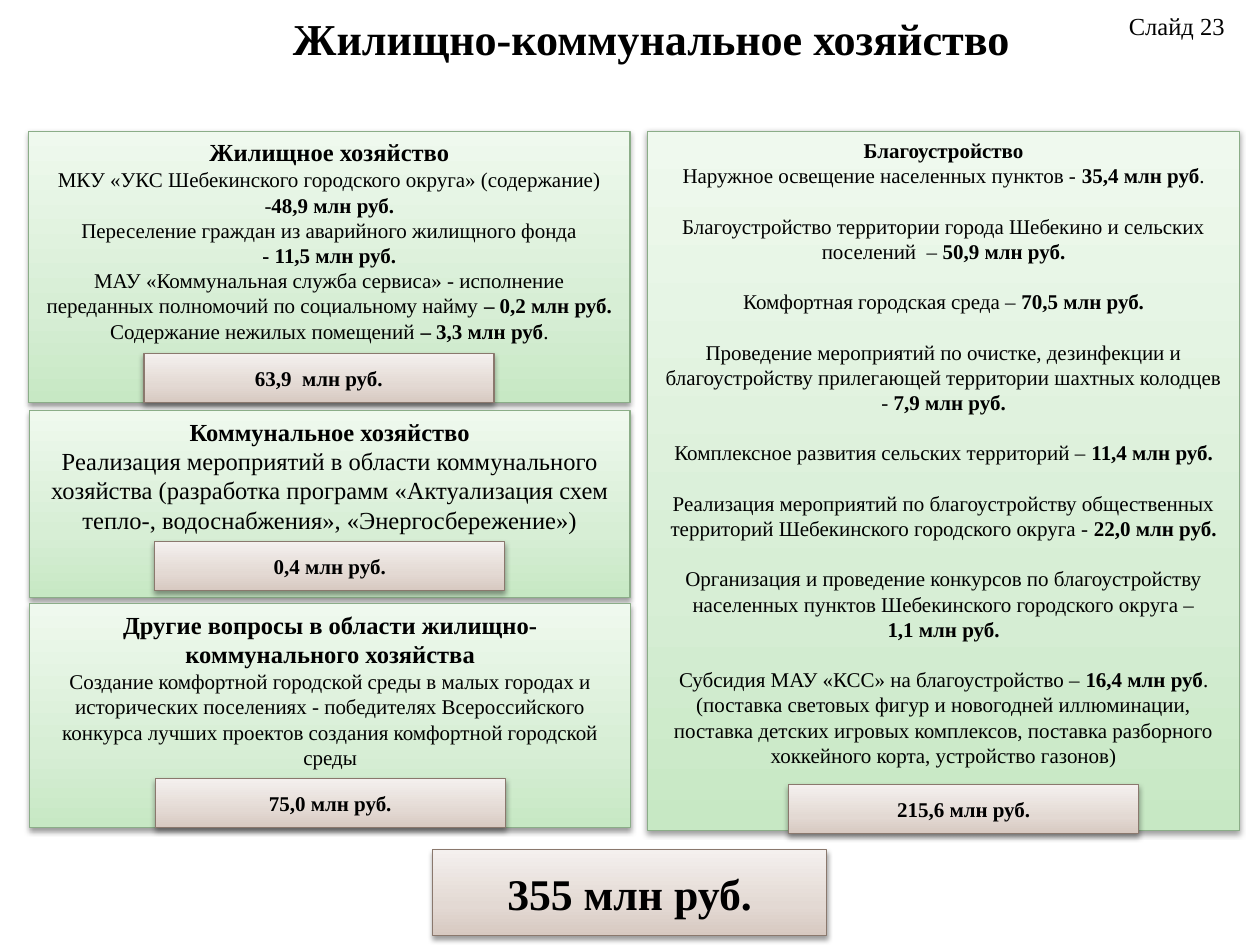
import copy

import pptx
import pptx.dml.color
import pptx.enum.shapes
import pptx.enum.text
import pptx.oxml
import pptx.oxml.ns
import pptx.util

Pt = pptx.util.Pt
RGBColor = pptx.dml.color.RGBColor
Anchor = pptx.enum.text.MSO_ANCHOR
Align = pptx.enum.text.PP_ALIGN

FONT = "Times New Roman"
BLACK = RGBColor(0x00, 0x00, 0x00)
GREEN_LINE = RGBColor(0x8B, 0xAD, 0x88)
BROWN_LINE = RGBColor(0x8A, 0x78, 0x6D)
# Gradients run from the bottom edge to the top edge
GREEN = (RGBColor(0xC7, 0xE8, 0xC4), RGBColor(0xD7, 0xEE, 0xD5), RGBColor(0xEF, 0xF9, 0xEE))
BROWN = (RGBColor(0xD7, 0xC9, 0xC1), RGBColor(0xE3, 0xD9, 0xD3), RGBColor(0xF4, 0xF0, 0xEE))
STOPS = (0, 0.35, 1)
SHADOW = (
    '<a:outerShdw %s blurRad="%d" dist="%d" dir="5400000" rotWithShape="0">'
    '<a:srgbClr val="000000"><a:alpha val="38000"/></a:srgbClr></a:outerShdw>'
    % (pptx.oxml.ns.nsdecls("a"), Pt(3.1), Pt(1.6))
)

BADGE_WIDTH, BADGE_HEIGHT = 200, 28
BLANK_LINE = 14.4

# Each section: box, heading, heading size, body size, gap between items,
# items (bold between **), total, badge shift from centre, badge overhang
SECTIONS = [
    ((370, 75, 338.5, 399.5), "Благоустройство", 12, 12, BLANK_LINE, [
        "Наружное освещение населенных пунктов - **35,4 млн руб**.",
        "Благоустройство территории города Шебекино и сельских поселений  – **50,9 млн руб.**",
        "Комфортная городская среда – **70,5 млн руб.**",
        "Проведение мероприятий по очистке, дезинфекции и благоустройству прилегающей "
        "территории шахтных колодцев - **7,9 млн руб.**",
        "Комплексное развития сельских территорий – **11,4 млн руб.**",
        "Реализация мероприятий по благоустройству общественных территорий "
        "Шебекинского городского округа - **22,0 млн руб.**",
        "Организация и проведение конкурсов по благоустройству населенных пунктов "
        "Шебекинского городского округа –\v**1,1 млн руб.**",
        "Субсидия МАУ «КСС» на благоустройство – **16,4 млн руб**. (поставка световых фигур "
        "и новогодней иллюминации, поставка детских игровых комплексов, поставка разборного "
        "хоккейного корта, устройство газонов)",
    ], "215,6 млн руб.", 11.5, 2),
    ((16.5, 75, 343.5, 155), "Жилищное хозяйство", 14, 12, 0, [
        "МКУ «УКС Шебекинского городского округа» (содержание) -**48,9 млн руб.**",
        "Переселение граждан из аварийного жилищного фонда",
        "**- 11,5 млн руб.**",
        "МАУ «Коммунальная служба сервиса» - исполнение переданных полномочий "
        "по социальному найму **– 0,2 млн руб.**",
        "Содержание нежилых помещений **– 3,3 млн руб**.",
    ], "63,9  млн руб.", -6, 0),
    ((17, 234.5, 343, 107), "Коммунальное хозяйство", 14, 14, 0, [
        "Реализация мероприятий в области коммунального хозяйства (разработка программ "
        "«Актуализация схем тепло-, водоснабжения», «Энергосбережение»)",
    ], "0,4 млн руб.", 0, -4),
    ((17, 345, 343.5, 128), "Другие вопросы в области жилищно-коммунального хозяйства", 14, 12, 0, [
        "Создание комфортной городской среды в малых городах и исторических поселениях - "
        "победителях Всероссийского конкурса лучших проектов создания комфортной городской среды",
    ], "75,0 млн руб.", 0, 0),
]


def write(paragraph, text, size, bold=False, align=Align.CENTER):
    """Fill a paragraph; parts between ** are bold."""
    paragraph.alignment = align
    paragraph.font.name = FONT
    paragraph.font.size = Pt(size)
    paragraph.font.color.rgb = BLACK
    parts = text.split("**")
    if len(parts) == 1:
        paragraph.font.bold = bold
    for index, part in enumerate(parts):
        if not part:
            continue
        lines = part.split("\v")
        for number, line in enumerate(lines):
            if number:
                paragraph.add_line_break()
            if line:
                run = paragraph.add_run()
                run.text = line
                if len(parts) > 1:
                    run.font.bold = index % 2 == 1


def add_card(slide, box, colors, line_color, anchor):
    """Add a gradient rectangle with a soft shadow."""
    card = slide.shapes.add_shape(
        pptx.enum.shapes.MSO_SHAPE.RECTANGLE, *(Pt(length) for length in box))
    card.fill.gradient()
    card.fill.gradient_angle = 90
    properties = card._element.spPr
    stop_list = properties.find(".//" + pptx.oxml.ns.qn("a:gsLst"))
    stop_list.append(copy.deepcopy(stop_list[0]))
    for stop, position, color in zip(card.fill.gradient_stops, STOPS, colors):
        stop.position = position
        stop.color.rgb = color
    card.line.color.rgb = line_color
    card.line.width = Pt(0.75)
    card.shadow.inherit = False
    effects = properties.find(pptx.oxml.ns.qn("a:effectLst"))
    effects.append(pptx.oxml.parse_xml(SHADOW))
    card.text_frame.word_wrap = True
    card.text_frame.vertical_anchor = anchor
    return card


def add_total(slide, box, amount, size):
    total = add_card(slide, box, BROWN, BROWN_LINE, Anchor.MIDDLE)
    write(total.text_frame.paragraphs[0], amount, size, bold=True)


def add_section(slide, box, heading, heading_size, body_size, gap, items, amount, shift, overhang):
    left, top, width, height = box
    frame = add_card(slide, box, GREEN, GREEN_LINE, Anchor.TOP).text_frame
    write(frame.paragraphs[0], heading, heading_size, bold=True)
    for index, item in enumerate(items):
        paragraph = frame.add_paragraph()
        paragraph.space_before = Pt(gap if index else 0)
        write(paragraph, item, body_size)
    # Section total on the lower edge
    badge_left = left + (width - BADGE_WIDTH) / 2 + shift
    badge_top = top + height - BADGE_HEIGHT + overhang
    add_total(slide, (badge_left, badge_top, BADGE_WIDTH, BADGE_HEIGHT), amount, 12)


def add_header(slide, title_box, number_box):
    title = slide.shapes.title
    title.left, title.top, title.width, title.height = (Pt(length) for length in title_box)
    title.text_frame.vertical_anchor = Anchor.TOP
    write(title.text_frame.paragraphs[0], "Жилищно-коммунальное хозяйство", 25.2, bold=True)
    # Slide number
    number = slide.shapes.add_textbox(*(Pt(length) for length in number_box))
    number.text_frame.word_wrap = True
    write(number.text_frame.paragraphs[0], "Слайд 23", 14, align=Align.LEFT)


def main():
    presentation = pptx.Presentation()
    presentation.slide_width, presentation.slide_height = Pt(720), Pt(540)
    slide = presentation.slides.add_slide(presentation.slide_layouts[5])
    add_header(slide, (57.5, 3, 629.5, 67), (638, 3, 71, 24.5))
    for section in SECTIONS:
        add_section(slide, *section)
    # Grand total
    add_total(slide, (247, 485.5, 225.5, 49), "355 млн руб.", 25)
    presentation.save("out.pptx")


if __name__ == "__main__":
    main()
